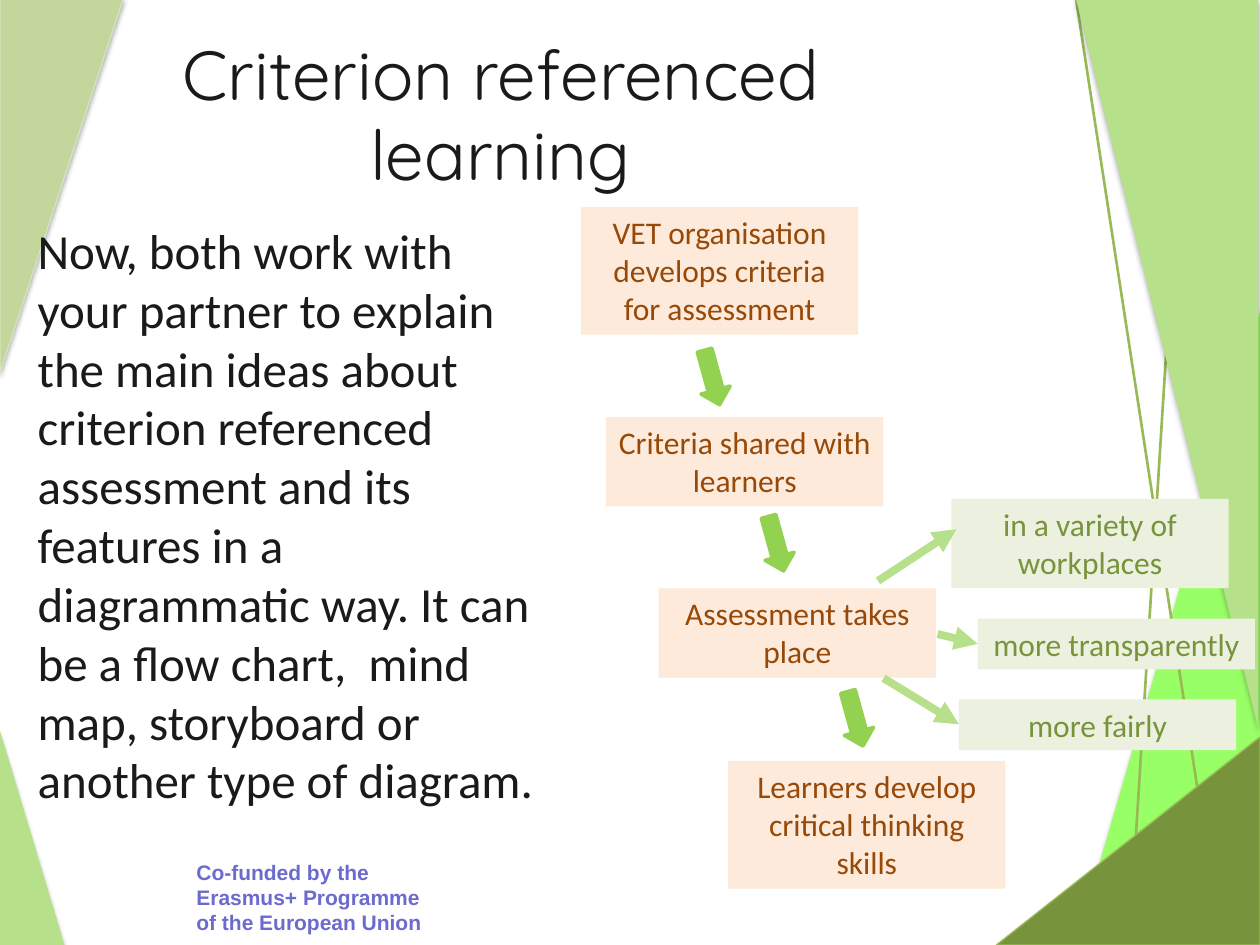
from dataclasses import dataclass

from lxml.etree import SubElement
from pptx import Presentation
from pptx.dml.color import RGBColor
from pptx.enum.shapes import MSO_CONNECTOR as Link, MSO_SHAPE as Preset
from pptx.enum.text import MSO_ANCHOR as Anchor, PP_ALIGN as Align
from pptx.oxml.ns import qn
from pptx.util import Cm, Pt


@dataclass(frozen=True)
class Theme:
    ink: str = "1A1A1A"
    funding: str = "6B6BCF"
    neon: str = "99FF66"
    lime: str = "B7E08B"
    sage: str = "C3D69B"
    sage_edge: str = "D7E4BD"
    olive: str = "77933C"
    stem: str = "98B955"
    arrow: str = "93D151"
    step_fill: str = "FDEADA"
    step_text: str = "984807"
    quality_fill: str = "EBF1DE"
    title_font: str = "Quicksand"
    body_font: str = "Calibri"
    funding_font: str = "Arial"
    title_size: float = 39.6
    body_size: float = 28
    box_size: float = 18
    funding_size: float = 12


class SlideBuilder:
    """Draws themed elements, measured in centimetres, on one slide."""

    def __init__(self, slide, theme):
        self.shapes = slide.shapes
        self.theme = theme

    def add_wording(self, shape, wording, font, size, color, align=Align.LEFT, bold=False):
        frame = shape.text_frame
        frame.word_wrap = True
        paragraph = frame.paragraphs[0]
        paragraph.alignment = align
        run = paragraph.add_run()
        run.text = wording
        run.font.name = font
        run.font.size = Pt(size)
        run.font.bold = bold
        run.font.color.rgb = RGBColor.from_string(color)
        return paragraph

    def text(self, place, wording, font, size, color, **style):
        box = self.shapes.add_textbox(*map(Cm, place))
        return box, self.add_wording(box, wording, font, size, color, **style)

    def preset(self, kind, place, fill, edge=None, weight=0.75):
        shape = self.shapes.add_shape(kind, *map(Cm, place))
        shape.shadow.inherit = False
        shape.fill.solid()
        shape.fill.fore_color.rgb = RGBColor.from_string(fill)
        if edge:
            shape.line.color.rgb = RGBColor.from_string(edge)
            shape.line.width = Pt(weight)
        else:
            shape.line.fill.background()
        return shape

    def facet(self, place, fill, edge=None, flips=(), opacity=35):
        triangle = self.preset(Preset.RIGHT_TRIANGLE, place, fill, edge)
        properties = triangle._element.spPr
        for flip in flips:
            properties.find(qn("a:xfrm")).set(flip, "1")
        shadow = SubElement(properties.find(qn("a:effectLst")), qn("a:outerShdw"),
                            blurRad=str(Pt(3.1)), dist=str(Pt(1.8)),
                            dir="5400000", rotWithShape="0")
        tint = SubElement(shadow, qn("a:srgbClr"), val="000000")
        SubElement(tint, qn("a:alpha"), val=str(opacity * 1000))

    def box(self, left, top, lines, wording, fill, color):
        place = (left, top, 5.59, 0.25 + 0.775 * lines)
        box = self.preset(Preset.RECTANGLE, place, fill)
        box.text_frame.vertical_anchor = Anchor.TOP
        self.add_wording(box, wording, self.theme.body_font, self.theme.box_size,
                         color, Align.CENTER)

    def block_arrow(self, left, top):
        arrow = self.preset(Preset.DOWN_ARROW, (left, top, 0.61, 1.14),
                            self.theme.arrow, self.theme.arrow, 2)
        arrow.rotation = 344.6

    def line(self, ends, color, weight, pointed=False):
        line = self.shapes.add_connector(Link.STRAIGHT, *map(Cm, ends))
        line.line.color.rgb = RGBColor.from_string(color)
        line.line.width = Pt(weight)
        properties = line._element.spPr
        if pointed:
            SubElement(properties.find(qn("a:ln")), qn("a:tailEnd"), type="triangle")
        SubElement(properties, qn("a:effectLst"))


def main():
    deck = Presentation()
    deck.slide_width, deck.slide_height = Cm(25.4), Cm(19.05)
    theme = Theme()
    page = SlideBuilder(deck.slides.add_slide(deck.slide_layouts[6]), theme)

    page.facet((21.69, 6.12, 3.76, 12.93), theme.neon, flips=["flipH"], opacity=38)
    page.text((3.71, 17.2, 5.08, 1.8),
              "Co-funded by the Erasmus+ Programme of the European Union",
              theme.funding_font, theme.funding_size, theme.funding, bold=True)
    page.facet((0, 14.73, 1.3, 4.32), theme.lime)
    page.facet((0, -0.03, 2.49, 7.54), theme.sage, theme.sage_edge, ["flipV"])
    for stem in ((22.76, 19.05, 23.62, 5.33), (24.51, 18.31, 21.69, -0.03)):
        page.line(stem, theme.stem, 1.5)
    page.facet((21.69, -0.03, 3.68, 14.73), theme.lime, flips=["flipH", "flipV"])
    page.facet((20.09, 14.86, 5.31, 4.19), theme.olive, theme.stem, ["flipH"])

    title, heading = page.text((1.88, 0.76, 16.43, 3.18), "Criterion referenced learning",
                               theme.title_font, theme.title_size, theme.ink,
                               align=Align.CENTER)
    title.text_frame.vertical_anchor = Anchor.MIDDLE
    heading.line_spacing = 0.96
    page.text((0.51, 4.32, 10.9, 12.57),
              "Now, both work with your partner to explain the main ideas about "
              "criterion referenced assessment and its features in a diagrammatic way. "
              "It can be a flow chart,  mind map, storyboard or another type of diagram.",
              theme.body_font, theme.body_size, theme.ink)

    steps = (
        (11.71, 4.17, 3, "VET organisation develops criteria for assessment"),
        (12.22, 8.41, 2, "Criteria shared with learners"),
        (13.28, 11.86, 2, "Assessment takes place"),
        (14.68, 15.34, 3, "Learners develop critical thinking skills"),
    )
    qualities = (
        (19.18, 10.06, 2, "in a variety of workplaces"),
        (19.71, 12.47, 1, "more transparently"),
        (19.33, 14.1, 1, "more fairly"),
    )
    for step in steps:
        page.box(*step, theme.step_fill, theme.step_text)
    for quality in qualities:
        page.box(*quality, theme.quality_fill, theme.olive)

    for corner in ((14.05, 7.04), (15.34, 10.39), (16.94, 13.92)):
        page.block_arrow(*corner)
    for branch in ((17.7, 11.71, 19.28, 10.67), (17.81, 13.67, 19.33, 14.6),
                   (18.9, 12.78, 19.71, 12.98)):
        page.line(branch, theme.lime, 4.5, pointed=True)

    deck.save("out.pptx")


if __name__ == "__main__":
    main()
